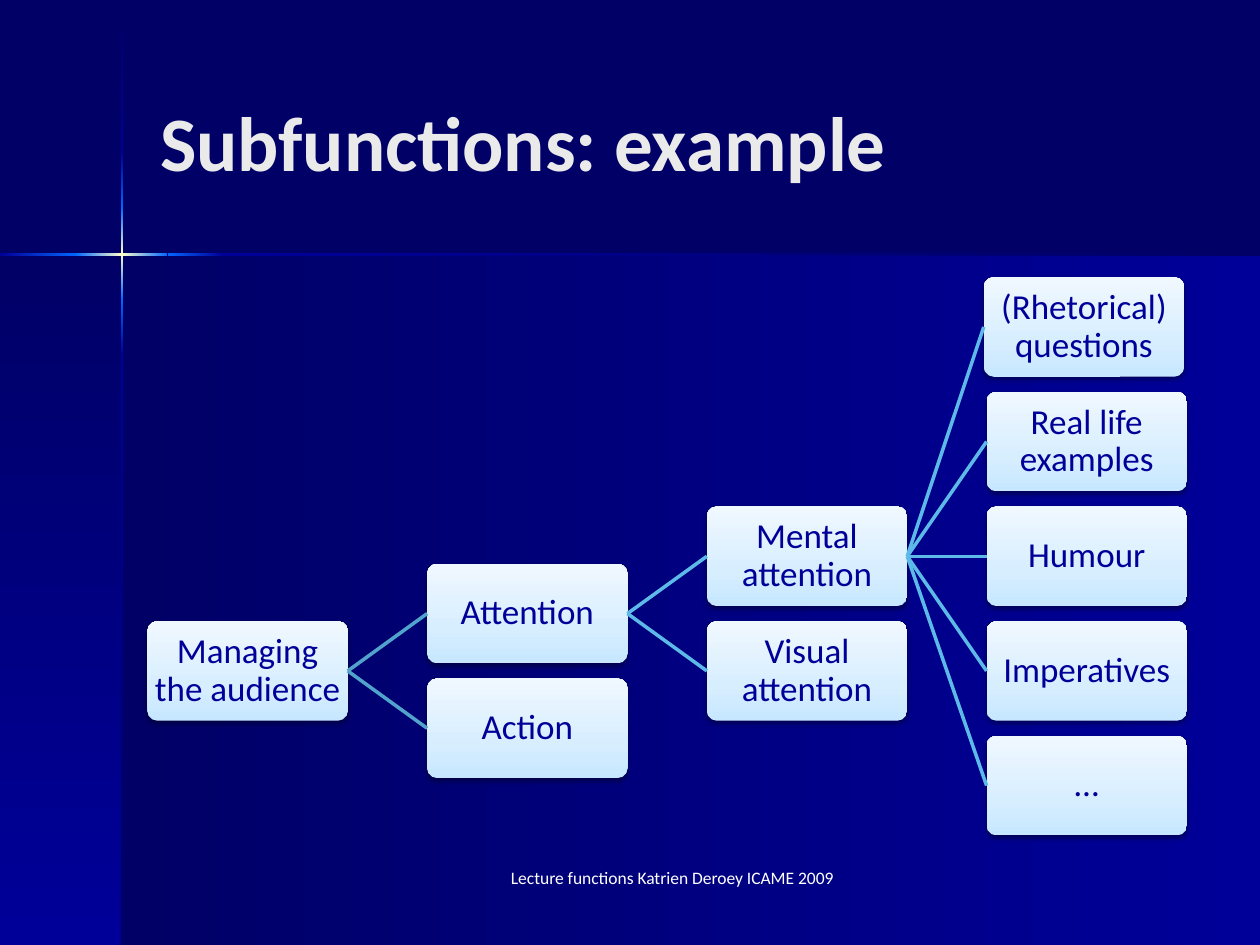
from pptx import Presentation
from pptx.dml.color import RGBColor
from pptx.enum.shapes import MSO_CONNECTOR as Connector, MSO_SHAPE as Shape
from pptx.enum.text import MSO_ANCHOR as Anchor, PP_ALIGN as Align
from pptx.oxml import parse_xml
from pptx.oxml.ns import nsdecls, qn
from pptx.util import Inches, Pt

NAVY = RGBColor(0x00, 0x00, 0x66)
BLUE = RGBColor(0x00, 0x00, 0x99)
BRIGHT = RGBColor(0x00, 0x66, 0xFF)
CREAM = RGBColor(0xFF, 0xFF, 0xCC)
TITLE = RGBColor(0xEA, 0xEA, 0xEA)
WHITE = RGBColor(0xFF, 0xFF, 0xFF)
TEAL = RGBColor(0x52, 0xA3, 0xCC)
SKY = RGBColor(0x5D, 0xB9, 0xE7)
BOX_STOPS = [
    (0, RGBColor(0xC6, 0xE7, 0xFF)),
    (35, RGBColor(0xD7, 0xEE, 0xFF)),
    (100, RGBColor(0xF0, 0xF8, 0xFF)),
]
FADE_IN = [(0, NAVY), (100, BLUE)]
FADE_OUT = [(0, BLUE), (100, NAVY)]
GLOW_IN = [(0, BLUE), (100, BRIGHT)]
GLOW_OUT = [(0, BRIGHT), (100, BLUE)]
FLARE = [(0, BRIGHT), (50, CREAM), (100, BRIGHT)]
ACROSS, DOWN, UP = 0, 90, 270

PANELS = [
    (0.97, 2.02, 9.03, 5.48, FADE_IN, ACROSS),
    (0, 2.02, 0.97, 5.48, FADE_IN, DOWN),
    (0.96, 0.01, 0.02, 1.2, FADE_IN, DOWN),
    (0.96, 2.82, 0.02, 4.68, FADE_OUT, DOWN),
    (1.77, 2.01, 8.23, 0.02, FADE_OUT, ACROSS),
    (0.96, 2.38, 0.02, 0.44, GLOW_OUT, DOWN),
    (0.96, 1.21, 0.02, 0.44, GLOW_IN, DOWN),
    (0.96, 1.65, 0.02, 0.73, FLARE, DOWN),
    (0, 2.01, 0.61, 0.02, GLOW_IN, ACROSS),
    (1.33, 2.01, 0.44, 0.02, GLOW_OUT, ACROSS),
    (0.6, 2.01, 0.73, 0.02, FLARE, ACROSS),
]

FIRST_LEFT, COLUMN_STEP = 1.17, 2.22
FIRST_TOP, ROW_STEP = 2.2, 0.91
BOX_WIDTH, BOX_HEIGHT = 1.59, 0.79
NODES = [
    ("Managing the audience", 0, 3, None),
    ("Attention", 1, 2.5, "Managing the audience"),
    ("Action", 1, 3.5, "Managing the audience"),
    ("Mental attention", 2, 2, "Attention"),
    ("Visual attention", 2, 3, "Attention"),
    ("(Rhetorical) questions", 2.99, 0, "Mental attention"),
    ("Real life examples", 3, 1, "Mental attention"),
    ("Humour", 3, 2, "Mental attention"),
    ("Imperatives", 3, 3, "Mental attention"),
    ("…", 3, 4, "Mental attention"),
]


class SlideBuilder:
    font_name = "Calibri"

    def __init__(self, slide):
        self.slide = slide
        fill = slide.background.fill
        fill.solid()
        fill.fore_color.rgb = NAVY

    def format_text(self, paragraph, size, color, align, bold=False):
        paragraph.alignment = align
        font = paragraph.font
        font.name = self.font_name
        font.size = Pt(size)
        font.bold = bold
        font.color.rgb = color

    def shape(self, kind, left, top, width, height, stops, angle):
        shape = self.slide.shapes.add_shape(
            kind, Inches(left), Inches(top), Inches(width), Inches(height))
        shape.fill.background()
        properties = shape.element.spPr
        stop_xml = "".join(
            f'<a:gs pos="{position * 1000}"><a:srgbClr val="{color}"/></a:gs>'
            for position, color in stops)
        gradient = parse_xml(
            f'<a:gradFill {nsdecls("a")} rotWithShape="1"><a:gsLst>{stop_xml}</a:gsLst>'
            f'<a:lin ang="{angle * 60000}" scaled="0"/></a:gradFill>')
        properties.replace(properties.find(qn("a:noFill")), gradient)
        shape.line.fill.background()
        shape.shadow.inherit = False
        return shape

    def title(self, text, left, top, width, height):
        title = self.slide.shapes.title
        title.left, title.top = Inches(left), Inches(top)
        title.width, title.height = Inches(width), Inches(height)
        title.text_frame.text = text
        title.text_frame.vertical_anchor = Anchor.MIDDLE
        self.format_text(title.text_frame.paragraphs[0], 44, TITLE, Align.LEFT, bold=True)

    def box(self, text, column, row):
        shape = self.shape(
            Shape.ROUNDED_RECTANGLE,
            FIRST_LEFT + column * COLUMN_STEP, FIRST_TOP + row * ROW_STEP,
            BOX_WIDTH, BOX_HEIGHT, BOX_STOPS, UP)
        shape.adjustments[0] = 0.1
        shape.element.spPr.find(qn("a:effectLst")).append(parse_xml(
            f'<a:outerShdw {nsdecls("a")} blurRad="{Pt(3.1)}" dist="{Pt(1.6)}" '
            'dir="5400000" rotWithShape="0"><a:srgbClr val="000000">'
            '<a:alpha val="38000"/></a:srgbClr></a:outerShdw>'))
        frame = shape.text_frame
        frame.word_wrap = True
        frame.vertical_anchor = Anchor.MIDDLE
        frame.margin_left = frame.margin_right = Inches(0.03)
        frame.margin_top = frame.margin_bottom = Inches(0.03)
        frame.text = text
        paragraph = frame.paragraphs[0]
        paragraph.line_spacing = 0.9
        self.format_text(paragraph, 20, BLUE, Align.CENTER)
        return shape

    def link(self, parent, child, color):
        connector = self.slide.shapes.add_connector(Connector.STRAIGHT, 0, 0, 0, 0)
        connector.begin_connect(parent, 3)
        connector.end_connect(child, 1)
        connector.line.color.rgb = color
        connector.line.width = Pt(2)
        connector.element.spPr.append(parse_xml(f'<a:effectLst {nsdecls("a")}/>'))

    def caption(self, text, left, top, width, height):
        caption = self.slide.shapes.add_textbox(
            Inches(left), Inches(top), Inches(width), Inches(height))
        caption.text_frame.word_wrap = True
        caption.text_frame.text = text
        self.format_text(caption.text_frame.paragraphs[0], 10, WHITE, Align.CENTER)


def main():
    presentation = Presentation()
    presentation.slide_width = Inches(10)
    presentation.slide_height = Inches(7.5)
    builder = SlideBuilder(presentation.slides.add_slide(presentation.slide_layouts[5]))

    for left, top, width, height, stops, angle in PANELS:
        builder.shape(Shape.RECTANGLE, left, top, width, height, stops, angle)
    builder.title("Subfunctions: example", 1.17, 0.33, 8.25, 1.57)

    boxes = {}
    for text, column, row, parent in NODES:
        boxes[text] = builder.box(text, column, row)
        if parent:
            builder.link(boxes[parent], boxes[text], TEAL if column == 1 else SKY)

    builder.caption("Lecture functions Katrien Deroey ICAME 2009", 3.75, 6.83, 3.17, 0.5)
    presentation.save("out.pptx")


if __name__ == "__main__":
    main()
